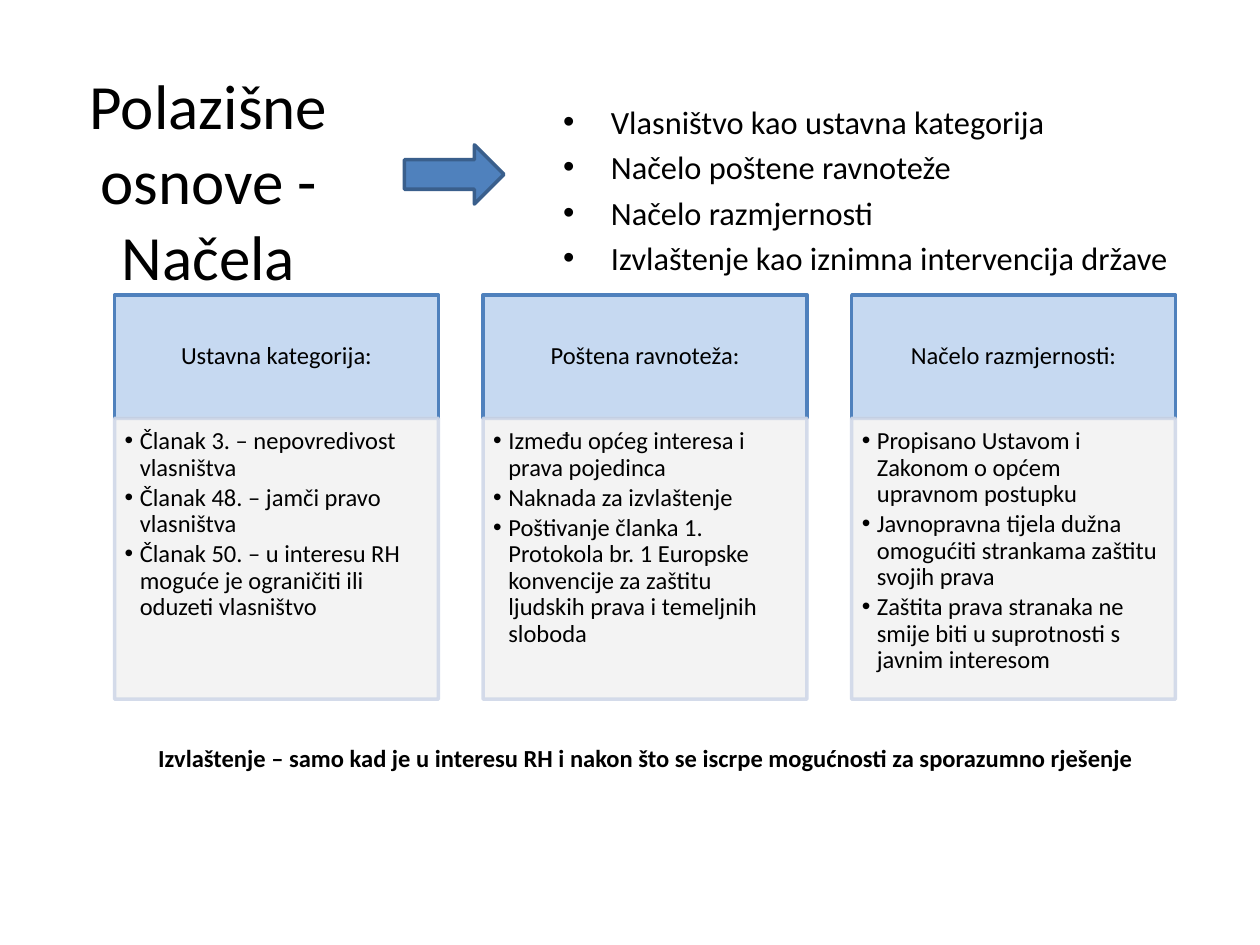
from lxml import etree
from pptx import Presentation
from pptx.dml.color import RGBColor
from pptx.enum import shapes, text
from pptx.oxml import ns
from pptx.util import Inches, Pt

HEX = {"ink": "000000", "blue": "4F81BD", "navy": "3A5F8C",
       "sky": "C6D9F1", "grey": "F2F2F2", "mist": "D0D8E8"}
FONT = "Calibri"
MID, TOP = text.MSO_ANCHOR.MIDDLE, text.MSO_ANCHOR.TOP

POINTS = ["Vlasništvo kao ustavna kategorija", "Načelo poštene ravnoteže",
          "Načelo razmjernosti", "Izvlaštenje kao iznimna intervencija države"]
CARDS = [
    ("Ustavna kategorija:", [
        "Članak 3. – nepovredivost vlasništva",
        "Članak 48. – jamči pravo vlasništva",
        "Članak 50. – u interesu RH moguće je ograničiti ili oduzeti vlasništvo"]),
    ("Poštena ravnoteža:", [
        "Između općeg interesa i prava pojedinca",
        "Naknada za izvlaštenje",
        "Poštivanje članka 1. Protokola br. 1 Europske konvencije za zaštitu "
        "ljudskih prava i temeljnih sloboda"]),
    ("Načelo razmjernosti:", [
        "Propisano Ustavom i Zakonom o općem upravnom postupku",
        "Javnopravna tijela dužna omogućiti strankama zaštitu svojih prava",
        "Zaštita prava stranaka ne smije biti u suprotnosti s javnim interesom"]),
]


def color(name):
    return RGBColor.from_string(HEX[name])


def place(shape, box):
    shape.left, shape.top, shape.width, shape.height = map(Inches, box)


def frame(shape, anchor=TOP, pads=(0.1, 0.05, 0.1, 0.05)):
    tf = shape.text_frame
    tf.word_wrap = True
    tf.auto_size = text.MSO_AUTO_SIZE.NONE
    tf.vertical_anchor = anchor
    tf.margin_left, tf.margin_top, tf.margin_right, tf.margin_bottom = map(Inches, pads)
    return tf


def bullet(para, dent):
    props = para._p.get_or_add_pPr()
    props.set("marL", str(Inches(dent)))
    props.set("indent", str(-Inches(dent)))
    font = etree.SubElement(props, ns.qn("a:buFont"))
    font.set("typeface", "Arial")
    etree.SubElement(props, ns.qn("a:buChar")).set("char", "•")


def write(tf, lines, size, bold=False, dent=0, gap=1.0, before=0, after=0):
    for i, line in enumerate(lines):
        para = tf.add_paragraph() if i else tf.paragraphs[0]
        para.alignment = text.PP_ALIGN.LEFT if dent else text.PP_ALIGN.CENTER
        para.line_spacing = gap
        para.space_before, para.space_after = Pt(before), Pt(after)
        if dent:
            bullet(para, dent)
        run = para.add_run()
        run.text = line
        run.font.name, run.font.size, run.font.bold = FONT, Pt(size), bold
        run.font.color.rgb = color("ink")


def add_box(slide, box):
    return slide.shapes.add_textbox(*map(Inches, box))


def add_form(slide, kind, box, fill, line, alpha=None):
    shape = slide.shapes.add_shape(kind, *map(Inches, box))
    shape.shadow.inherit = False
    shape.fill.solid()
    shape.fill.fore_color.rgb = color(fill)
    shape.line.color.rgb = color(line)
    shape.line.width = Pt(2)
    if alpha:
        for tint in shape._element.spPr.iter(ns.qn("a:srgbClr")):
            etree.SubElement(tint, ns.qn("a:alpha")).set("val", str(alpha * 1000))
    return shape


def add_card(slide, left, head, items):
    rect = shapes.MSO_SHAPE.RECTANGLE
    top = add_form(slide, rect, (left, 2.34, 2.57, 0.98), "sky", "blue")
    write(frame(top, MID, (0.11, 0.06, 0.11, 0.06)), [head], 14, gap=0.9)
    body = add_form(slide, rect, (left, 3.32, 2.57, 2.23), "grey", "mist", 90)
    write(frame(body, TOP, (0.08, 0.08, 0.11, 0.12)), items, 14,
          dent=0.12, gap=0.9, after=2.1)


def main():
    deck = Presentation()
    deck.slide_width, deck.slide_height = Inches(10), Inches(7.5)
    slide = deck.slides.add_slide(deck.slide_layouts[5])

    title = slide.shapes.title
    place(title, (0.59, 0.6, 2.13, 1.65))
    write(frame(title, MID), ["Polazišne osnove - Načela"], 36)

    points = add_box(slide, (4.37, 0.76, 5.12, 1.5))
    write(frame(points), POINTS, 18.5, dent=0.38, before=3.7)

    add_form(slide, shapes.MSO_SHAPE.RIGHT_ARROW, (3.21, 1.15, 0.79, 0.47),
             "blue", "navy")

    for i, (head, items) in enumerate(CARDS):
        add_card(slide, 0.91 + i * 2.925, head, items)

    note = add_box(slide, (0.91, 5.85, 8.43, 0.34))
    write(frame(note), ["Izvlaštenje – samo kad je u interesu RH i nakon što se "
                        "iscrpe mogućnosti za sporazumno rješenje"], 14, bold=True)

    deck.save("out.pptx")


if __name__ == "__main__":
    main()
